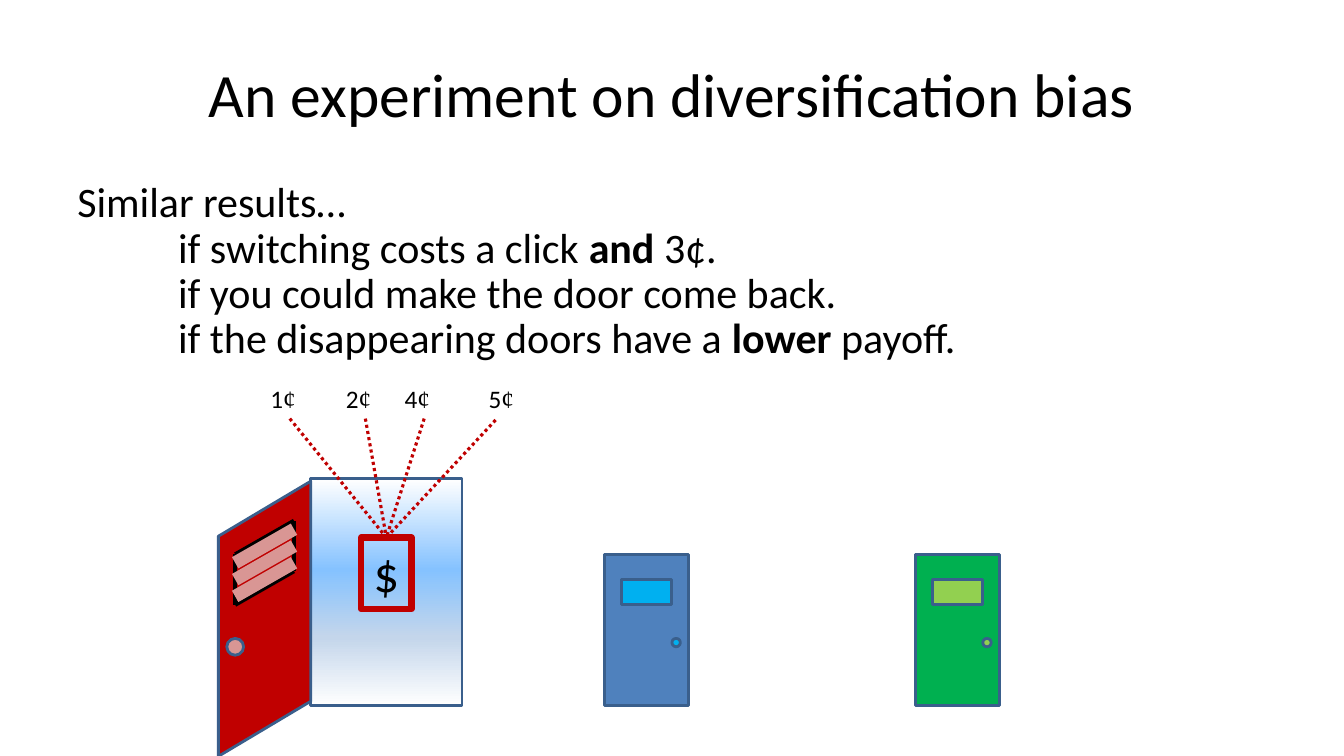
from dataclasses import dataclass

from lxml import etree
from pptx import Presentation
from pptx import util as u
from pptx.dml.color import RGBColor
from pptx.enum import dml, shapes, text
from pptx.oxml.ns import qn


@dataclass(frozen=True)
class Theme:
    font: str = "Calibri"
    cent_font: str = "Times New Roman"
    black: str = "000000"
    outline: str = "3A5F8C"
    red: str = "C00000"
    pink: str = "D99694"
    blue: str = "4F81BD"
    sky: str = "00B0F0"
    green: str = "00B050"
    lime: str = "92D050"
    room: tuple = ((0, "FFFFFF"), (40, "85C2FF"), (70, "C4D6EB"), (100, "FFFFFF"))
    title_size: int = 44
    body_size: int = 30
    prize_size: int = 36
    label_size: int = 18


def color(value):
    return RGBColor.from_string(value)


def apply(target, formats):
    for name, value in formats.items():
        setattr(target, name, value)


class SlideBuilder:
    def __init__(self, presentation, theme):
        self.theme = theme
        self.slide = presentation.slides.add_slide(presentation.slide_layouts[1])

    def place(self, shape, box):
        apply(shape, dict(zip(("left", "top", "width", "height"), map(u.Pt, box))))

    def run(self, paragraph, words, size, font=None, bold=False):
        run = paragraph.add_run()
        run.text = words
        apply(run.font, {"name": font or self.theme.font, "size": u.Pt(size), "bold": bold})
        run.font.color.rgb = color(self.theme.black)

    def title(self, words, box):
        shape = self.slide.shapes.title
        self.place(shape, box)
        frame = shape.text_frame
        apply(frame, {"vertical_anchor": text.MSO_ANCHOR.MIDDLE, "auto_size": text.MSO_AUTO_SIZE.NONE})
        paragraph = frame.paragraphs[0]
        paragraph.alignment = text.PP_ALIGN.CENTER
        self.run(paragraph, words, self.theme.title_size)

    def body(self, lines, box):
        shape = self.slide.placeholders[1]
        self.place(shape, box)
        frame = shape.text_frame
        frame.auto_size = text.MSO_AUTO_SIZE.NONE
        for index, pieces in enumerate(lines):
            paragraph = frame.add_paragraph() if index else frame.paragraphs[0]
            apply(paragraph, {"line_spacing": 0.9, "space_before": u.Pt(0), "space_after": u.Pt(0)})
            properties = paragraph._p.get_or_add_pPr()
            for name, length in {"marL": 0, "indent": 0, "defTabSz": 72}.items():
                properties.set(name, str(int(u.Pt(length))))
            etree.SubElement(properties, qn("a:buNone"))
            for position, words in enumerate(pieces):
                self.run(paragraph, words, self.theme.body_size, bold=position % 2 == 1)

    def shape(self, kind, box, fill=None, line=None, width=2):
        shape = self.slide.shapes.add_shape(kind, *map(u.Pt, box))
        shape.shadow.inherit = False
        if fill:
            shape.fill.solid()
            shape.fill.fore_color.rgb = color(fill)
        else:
            shape.fill.background()
        shape.line.color.rgb = color(line or self.theme.outline)
        shape.line.width = u.Pt(width)
        return shape

    def rectangle(self, box, fill=None, **line):
        return self.shape(shapes.MSO_SHAPE.RECTANGLE, box, fill, **line)

    def knob(self, left, top, size, fill):
        self.shape(shapes.MSO_SHAPE.OVAL, (left, top, size, size), fill)

    def gradient(self, shape, stops):
        shape.fill.gradient()
        shape.fill.gradient_angle = 270
        stop_list = shape._element.spPr.find(qn("a:gradFill")).find(qn("a:gsLst"))
        for old_stop in list(stop_list):
            stop_list.remove(old_stop)
        for percent, value in stops:
            stop = etree.SubElement(stop_list, qn("a:gs"), pos=str(percent * 1000))
            etree.SubElement(stop, qn("a:srgbClr"), val=value)

    def open_door(self, box, fill):
        door = self.shape(shapes.MSO_SHAPE.FLOWCHART_DATA, box, fill)
        door.rotation = 90
        door._element.spPr.find(qn("a:xfrm")).set("flipV", "1")

    def line(self, start, end, value, width, dash=None):
        connector = self.slide.shapes.add_connector(
            shapes.MSO_CONNECTOR.STRAIGHT, *map(u.Pt, (*start, *end)))
        connector.line.color.rgb = color(value)
        apply(connector.line, {"width": u.Pt(width), "dash_style": dash})
        etree.SubElement(connector._element.spPr, qn("a:effectLst"))
        return connector

    def label(self, digit, box):
        shape = self.slide.shapes.add_textbox(*map(u.Pt, box))
        shape.text_frame.word_wrap = True
        paragraph = shape.text_frame.paragraphs[0]
        self.run(paragraph, digit, self.theme.label_size)
        self.run(paragraph, "¢", self.theme.label_size, self.theme.cent_font)
        return shape

    def prize(self, box):
        shape = self.rectangle(box, line=self.theme.red, width=4.5)
        shape.text_frame.vertical_anchor = text.MSO_ANCHOR.TOP
        paragraph = shape.text_frame.paragraphs[0]
        paragraph.alignment = text.PP_ALIGN.CENTER
        self.run(paragraph, "$", self.theme.prize_size)
        return shape


def main():
    presentation = Presentation()
    apply(presentation, {"slide_width": u.Pt(960), "slide_height": u.Pt(540)})
    theme = Theme()
    builder = SlideBuilder(presentation, theme)

    builder.title("An experiment on diversification bias", (48, 21.6, 864, 90))
    builder.body([
        ["Similar results…"],
        ["\tif switching costs a click ", "and", " 3¢."],
        ["\tif you could make the door come back."],
        ["\tif the disappearing doors have a ", "lower", " payoff."],
    ], (48, 126, 864, 356.4))

    room = builder.rectangle((222, 342, 108, 162))
    builder.gradient(room, theme.room)
    for left, fill, accent in ((432, theme.blue, theme.sky), (654, theme.green, theme.lime)):
        builder.rectangle((left, 396, 60, 108), fill)
        builder.rectangle((left + 12, 414, 36, 18), accent)
        builder.knob(left + 48, 456, 6, accent)

    builder.open_door((90.75, 409, 196.5, 66), theme.red)
    hinge, edge, rise = 168, 210, 24
    for top in (396, 432):
        builder.line((hinge, top), (edge, top - rise), theme.black, 3)
    for side, top in ((hinge, 396), (edge, 396 - rise)):
        builder.line((side, top + 36), (side, top), theme.black, 3)
    builder.knob(162, 456, 12, theme.pink)
    for top in (414, 426, 402):
        builder.line((hinge, top), (edge, top - rise), theme.pink, 9.25)

    prize = builder.prize((258, 384, 36, 51))
    labels = [(builder.label(digit, (left, 270, 42, 29)), left)
              for digit, left in (("1", 186), ("2", 240), ("4", 282), ("5", 342))]
    for label, left in labels:
        is_last = label is labels[-1][0]
        start = (left + 12, 300) if is_last else (left + 21, 299)
        ray = builder.line(start, (276, 384), theme.red, 2.25, dml.MSO_LINE.ROUND_DOT)
        if not is_last:
            ray.begin_connect(label, 2)
        ray.end_connect(prize, 0)

    presentation.save("out.pptx")


if __name__ == "__main__":
    main()
